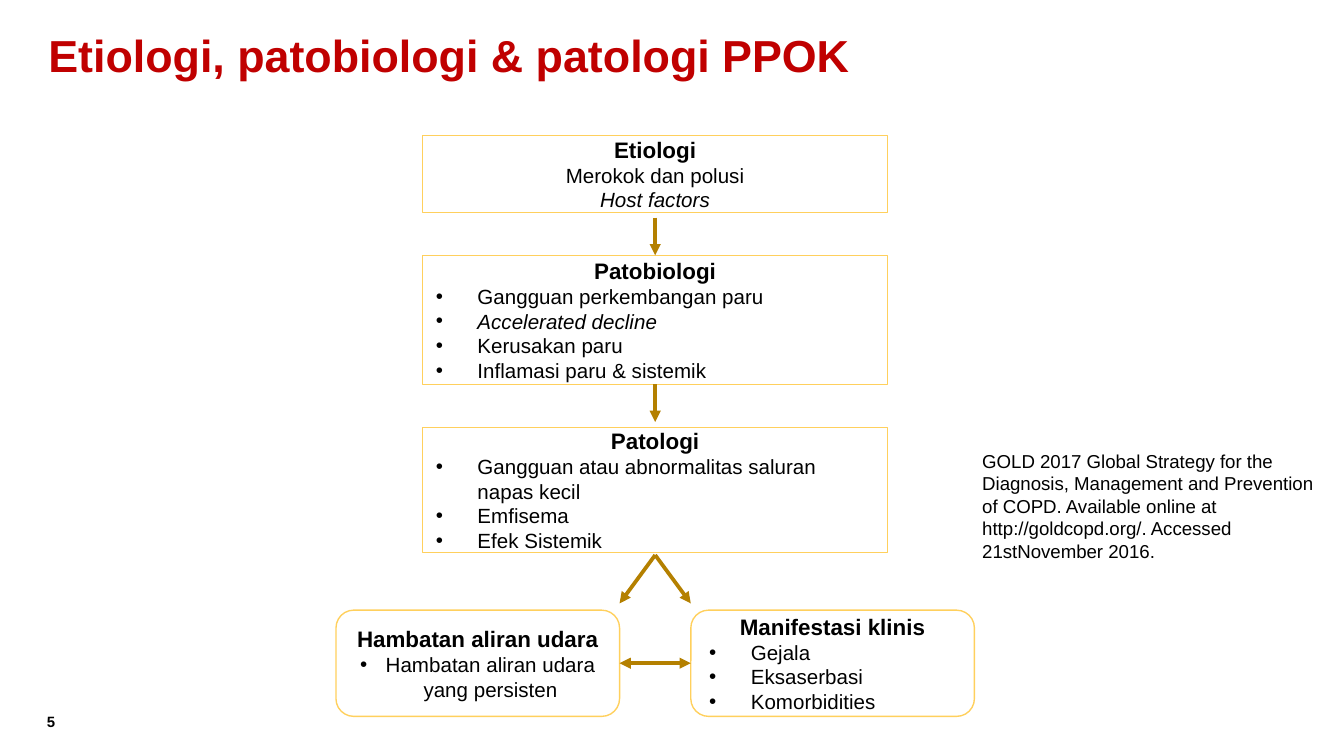
from collections import namedtuple

from lxml.etree import SubElement
from pptx import Presentation
from pptx.dml.color import RGBColor
from pptx.enum.shapes import MSO_CONNECTOR, MSO_SHAPE
from pptx.enum.text import MSO_ANCHOR, PP_ALIGN
from pptx.oxml.ns import qn
from pptx.util import Inches, Pt

# A 16:9 page, laid out on a square grid of 1000 columns
COLUMNS = 1000
WIDTH = Inches(10)
HEIGHT = WIDTH * 9 // 16
COLORS = {"title": "C00000", "text": "000000", "border": "FFD05D", "arrow": "B48000"}
FONT = "Arial"

Box = namedtuple("Box", "left top width height")
Item = namedtuple("Item", "text italic", defaults=(False,))


def color(name):
    return RGBColor.from_string(COLORS[name])


def grid(*cells):
    """Turn counts of grid cells into lengths."""
    return [round(WIDTH * cell / COLUMNS) for cell in cells]


def inside(region, left, top, width, height):
    """Box given relative to the corner of a region."""
    return Box(region.left + left, region.top + top, width, height)


def style(para, size, tone="text", bold=False, italic=False):
    font = para.font
    font.name, font.size, font.bold, font.italic = FONT, Pt(size), bold, italic
    font.color.rgb = color(tone)


def add_bullet(para, indent):
    properties = para._p.get_or_add_pPr()
    properties.set("marL", str(Inches(indent)))
    properties.set("indent", str(-Inches(indent)))
    SubElement(properties, qn("a:buFont"), typeface=FONT)
    SubElement(properties, qn("a:buChar"), char="•")


def add_title(page, box, text):
    title = page.shapes.title
    title.left, title.top, title.width, title.height = grid(*box)
    frame = title.text_frame
    frame.text = text
    frame.vertical_anchor = MSO_ANCHOR.MIDDLE
    frame.margin_bottom = Inches(0.11)
    para = frame.paragraphs[0]
    para.alignment = PP_ALIGN.LEFT
    style(para, 24, "title", bold=True)


def add_label(page, box, text, size, bold=False, margin=None, anchor=MSO_ANCHOR.TOP):
    frame = page.shapes.add_textbox(*grid(*box)).text_frame
    frame.word_wrap = True
    frame.vertical_anchor = anchor
    if margin is not None:
        frame.margin_left = frame.margin_right = margin
        frame.margin_top = frame.margin_bottom = margin
    frame.text = text
    style(frame.paragraphs[0], size, bold=bold)


def add_card(page, box, heading, items, indent=0.31, centered=False, rounded=False):
    """Outlined card with a heading; an indent of 0 means no bullets."""
    kind = MSO_SHAPE.ROUNDED_RECTANGLE if rounded else MSO_SHAPE.RECTANGLE
    card = page.shapes.add_shape(kind, *grid(*box))
    card.shadow.inherit = False
    card.fill.background()
    card.line.color.rgb = color("border")
    card.line.width = Pt(0.75)
    frame = card.text_frame
    frame.word_wrap = True
    frame.vertical_anchor = MSO_ANCHOR.MIDDLE
    frame.text = heading
    frame.paragraphs[0].alignment = PP_ALIGN.CENTER
    style(frame.paragraphs[0], 12, bold=True)
    for item in items:
        para = frame.add_paragraph()
        para.text = item.text
        para.alignment = PP_ALIGN.CENTER if centered else PP_ALIGN.LEFT
        if indent:
            add_bullet(para, indent)
        style(para, 11, italic=item.italic)


def add_arrow(page, start, end, both_ends=False):
    arrow = page.shapes.add_connector(MSO_CONNECTOR.STRAIGHT, *grid(*start, *end))
    arrow.line.color.rgb = color("arrow")
    arrow.line.width = Pt(2)
    line = arrow.line._get_or_add_ln()
    if both_ends:
        SubElement(line, qn("a:headEnd"), type="triangle")
    SubElement(line, qn("a:tailEnd"), type="triangle")
    SubElement(arrow._element.spPr, qn("a:effectLst"))


def add_flow(page, region):
    # Stacked causes, centred in the region
    middle = region.left + region.width / 2
    stack_width = 346
    stack_left = (region.width - stack_width) / 2
    etiology = inside(region, stack_left, 0, stack_width, 57)
    pathobiology = inside(region, stack_left, 89, stack_width, 96)
    pathology = inside(region, stack_left, 217, stack_width, 93)
    add_card(page, etiology, "Etiologi",
             [Item("Merokok dan polusi"), Item("Host factors", True)],
             indent=0, centered=True)
    add_card(page, pathobiology, "Patobiologi",
             [Item("Gangguan perkembangan paru"), Item("Accelerated decline", True),
              Item("Kerusakan paru"), Item("Inflamasi paru & sistemik")])
    add_card(page, pathology, "Patologi",
             [Item("Gangguan atau abnormalitas saluran napas kecil"),
              Item("Emfisema"), Item("Efek Sistemik")])

    # Two outcomes at the foot of the region
    width, height = 211, 79
    foot = region.height - height
    obstruction = inside(region, 0, foot, width, height)
    symptoms = inside(region, region.width - width, foot, width, height)
    add_card(page, obstruction, "Hambatan aliran udara",
             [Item("Hambatan aliran udara yang persisten")],
             indent=0.19, centered=True, rounded=True)
    add_card(page, symptoms, "Manifestasi klinis",
             [Item("Gejala"), Item("Eksaserbasi"), Item("Komorbidities")],
             rounded=True)

    # Arrows down the stack, out to the outcomes and between them
    length = 28
    for start in (pathobiology.top - length, pathobiology.top + pathobiology.height):
        add_arrow(page, (middle, start), (middle, start + length))
    inner_edges = (obstruction.left + width, symptoms.left)
    for edge in inner_edges:
        add_arrow(page, (middle, pathology.top + pathology.height + 2),
                  (edge, obstruction.top - 5))
    level = obstruction.top + height / 2
    add_arrow(page, (inner_edges[0], level), (inner_edges[1], level), both_ends=True)


def main():
    deck = Presentation()
    deck.slide_width, deck.slide_height = WIDTH, HEIGHT
    page = deck.slides.add_slide(deck.slide_layouts.get_by_name("Title Only"))
    add_title(page, Box(26, 16, 906, 55), "Etiologi, patobiologi & patologi PPOK")
    add_flow(page, Box(250, 101, 475, 432))
    # Reference and page number
    add_label(page, Box(721, 312, 279, 111),
              "GOLD 2017 Global Strategy for the Diagnosis, Management and Prevention "
              "of COPD. Available online at http://goldcopd.org/. Accessed "
              "21stNovember 2016.", 10, anchor=MSO_ANCHOR.BOTTOM)
    add_label(page, Box(35, 530, 43, 18), "5", 8, bold=True, margin=0)
    deck.save("out.pptx")


if __name__ == "__main__":
    main()
